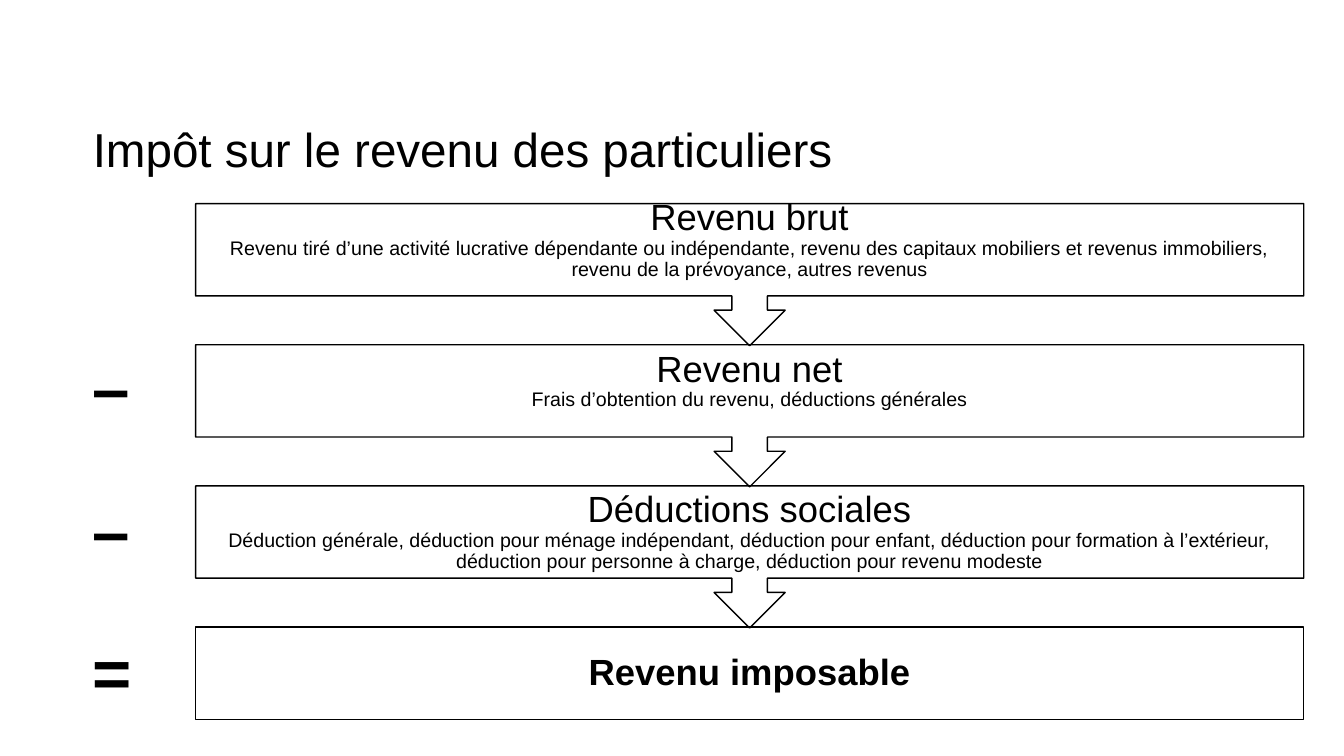
"""Build the slide on personal income tax, from gross to taxable income."""
from dataclasses import dataclass

import pptx
import pptx.dml.color
import pptx.enum.shapes
import pptx.enum.text
import pptx.util
from pptx.util import Inches


@dataclass(frozen=True)
class Theme:
    font: str = "Arial"
    ink: pptx.dml.color.RGBColor = pptx.dml.color.RGBColor(0, 0, 0)
    title: int = 34
    heading: int = 26
    detail: int = 14
    operator: int = 48
    outline: int = 1


theme = Theme()
ALIGN = pptx.enum.text.PP_ALIGN
SHAPE = pptx.enum.shapes.MSO_SHAPE


def write(frame, text, size, bold=False, align=ALIGN.LEFT, spacing=1.0, side=0, bottom=0, append=False):
    """Write one formatted paragraph into a text frame."""
    frame.word_wrap = True
    frame.vertical_anchor = pptx.enum.text.MSO_ANCHOR.MIDDLE
    frame.margin_left = frame.margin_right = Inches(side)
    frame.margin_top, frame.margin_bottom = 0, Inches(bottom)
    paragraph = frame.add_paragraph() if append else frame.paragraphs[0]
    paragraph.alignment = align
    paragraph.line_spacing = spacing
    run = paragraph.add_run()
    run.text = text
    run.font.name = theme.font
    run.font.size = pptx.util.Pt(size)
    run.font.bold = bold
    run.font.color.rgb = theme.ink


deck = pptx.Presentation()
deck.slide_width, deck.slide_height = Inches(13.33), Inches(7.5)
slide = deck.slides.add_slide(deck.slide_layouts[6])

title = slide.shapes.add_textbox(Inches(0.92), Inches(1.17), Inches(12.01), Inches(0.68))
write(title.text_frame, "Impôt sur le revenu des particuliers", theme.title, spacing=0.9)

steps = [
    ("", "Revenu brut",
     "Revenu tiré d’une activité lucrative dépendante ou indépendante, revenu des capitaux "
     "mobiliers et revenus immobiliers, revenu de la prévoyance, autres revenus", 0.2),
    ("–", "Revenu net", "Frais d’obtention du revenu, déductions générales", 0.2),
    ("–", "Déductions sociales",
     "Déduction générale, déduction pour ménage indépendant, déduction pour enfant, déduction "
     "pour formation à l’extérieur, déduction pour personne à charge, déduction pour revenu modeste", 0),
    ("=", "Revenu imposable", "", 0),
]

for index, (operator, heading, detail, bottom) in reversed(list(enumerate(steps))):
    outline, height = (SHAPE.DOWN_ARROW_CALLOUT, 1.41) if detail else (SHAPE.RECTANGLE, 0.92)
    step = slide.shapes.add_shape(
        outline, Inches(1.94), Inches(2.02 + 1.4 * index), Inches(10.99), Inches(height))
    step.shadow.inherit = False
    step.fill.background()
    step.line.color.rgb = theme.ink
    step.line.width = pptx.util.Pt(theme.outline)
    layout = dict(align=ALIGN.CENTER, spacing=0.9, side=0.2, bottom=bottom)
    write(step.text_frame, heading, theme.heading, bold=not detail, **layout)
    if detail:
        write(step.text_frame, detail, theme.detail, append=True, **layout)

for index, (operator, *_) in enumerate(steps):
    if operator:
        sign = slide.shapes.add_textbox(
            Inches(0.92), Inches(1.95 + 1.41 * index), Inches(1.02), Inches(0.94))
        write(sign.text_frame, operator, theme.operator, bold=True)

deck.save("out.pptx")
